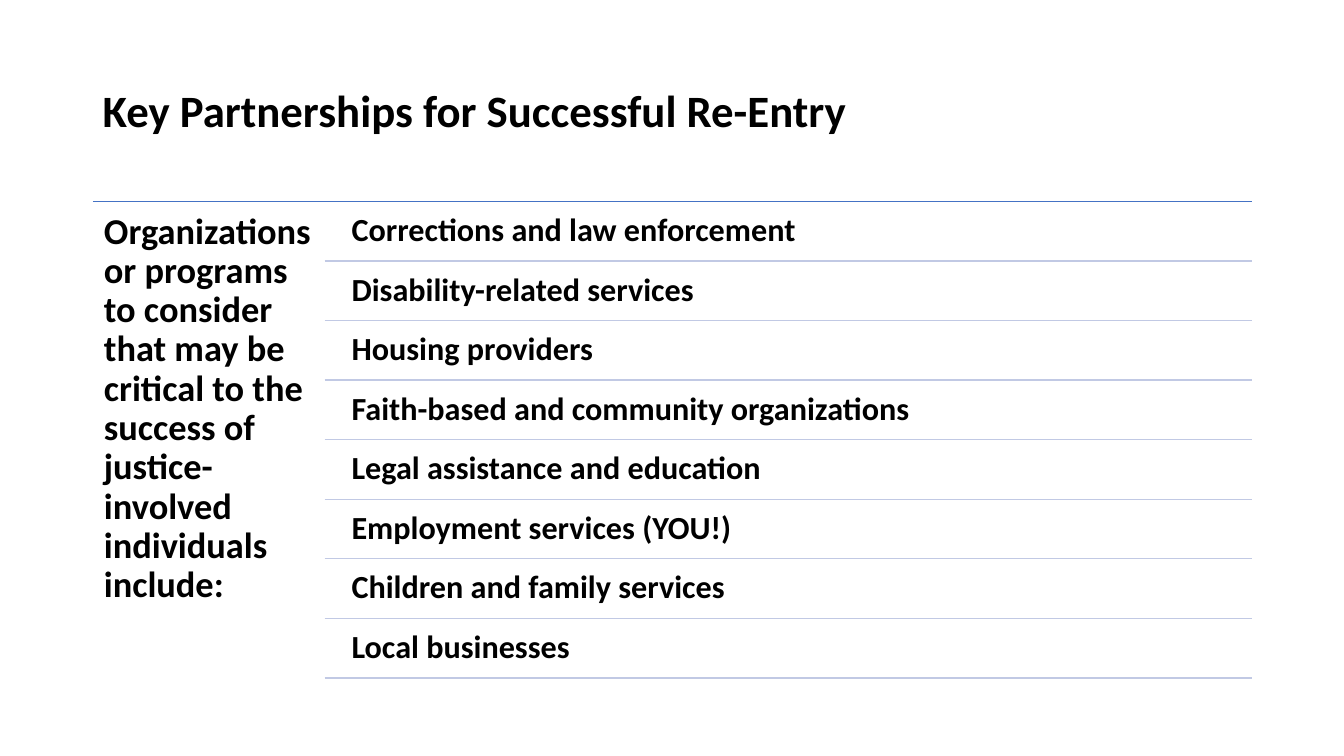
from lxml import etree
from pptx import Presentation
from pptx.dml.color import RGBColor
from pptx.enum.shapes import MSO_CONNECTOR
from pptx.enum.text import MSO_ANCHOR
from pptx.oxml.ns import qn
from pptx.util import Cm, Pt

STRAIGHT = MSO_CONNECTOR.STRAIGHT
TOP = MSO_ANCHOR.TOP
MIDDLE = MSO_ANCHOR.MIDDLE

BLACK = RGBColor(0x00, 0x00, 0x00)
BLUE = RGBColor(0x44, 0x72, 0xC4)
PALE_BLUE = RGBColor(0xC1, 0xC9, 0xE4)

LEFT = 2.34
RIGHT = 31.55
LIST_TOP = 5.08
RULE_LEFT = 8.18
PARTNER_LEFT = 8.61
ROW_HEIGHT = 1.5

TITLE = "Key Partnerships for Successful Re-Entry"
INTRODUCTION = (
    "Organizations or programs to consider that may be critical to the "
    "success of justice-involved individuals include:"
)
PARTNERS = [
    "Corrections and law enforcement",
    "Disability-related services",
    "Housing providers",
    "Faith-based and community organizations",
    "Legal assistance and education",
    "Employment services (YOU!)",
    "Children and family services",
    "Local businesses",
]


def add_text(slide, text, left, top, width, height, *, size,
             inset_x=0.25, inset_y=0.25, anchor=TOP):
    shape = slide.shapes.add_textbox(Cm(left), Cm(top), Cm(width), Cm(height))
    frame = shape.text_frame
    frame.word_wrap = True
    frame.vertical_anchor = anchor
    frame.margin_left = frame.margin_right = Cm(inset_x)
    frame.margin_top = frame.margin_bottom = Cm(inset_y)
    paragraph = frame.paragraphs[0]
    paragraph.line_spacing = 0.9
    run = paragraph.add_run()
    run.text = text
    run.font.name = "Calibri"
    run.font.size = Pt(size)
    run.font.bold = True
    run.font.color.rgb = BLACK


def add_rule(slide, left, top, color):
    connector = slide.shapes.add_connector(
        STRAIGHT, Cm(left), Cm(top), Cm(RIGHT), Cm(top))
    connector.line.color.rgb = color
    connector.line.width = Pt(1)
    properties = connector._element.find(qn("p:spPr"))
    etree.SubElement(properties, qn("a:effectLst"))


def add_partner(slide, text, top):
    add_text(slide, text, PARTNER_LEFT, top, RIGHT - PARTNER_LEFT, 1.43, size=23)
    add_rule(slide, RULE_LEFT, top + 1.44, PALE_BLUE)


def main():
    presentation = Presentation()
    presentation.slide_width = Cm(33.87)
    presentation.slide_height = Cm(19.05)
    slide = presentation.slides.add_slide(presentation.slide_layouts[6])

    add_text(slide, TITLE, LEFT, 1.01, RIGHT - LEFT, 3.68,
             size=32, inset_y=0.13, anchor=MIDDLE)
    add_rule(slide, LEFT, LIST_TOP, BLUE)
    add_text(slide, INTRODUCTION, LEFT, LIST_TOP, RULE_LEFT - LEFT, 12.09,
             size=26, inset_x=0.28, inset_y=0.28)
    for row, partner in enumerate(PARTNERS):
        add_partner(slide, partner, LIST_TOP + 0.06 + row * ROW_HEIGHT)

    presentation.save("out.pptx")


if __name__ == "__main__":
    main()
